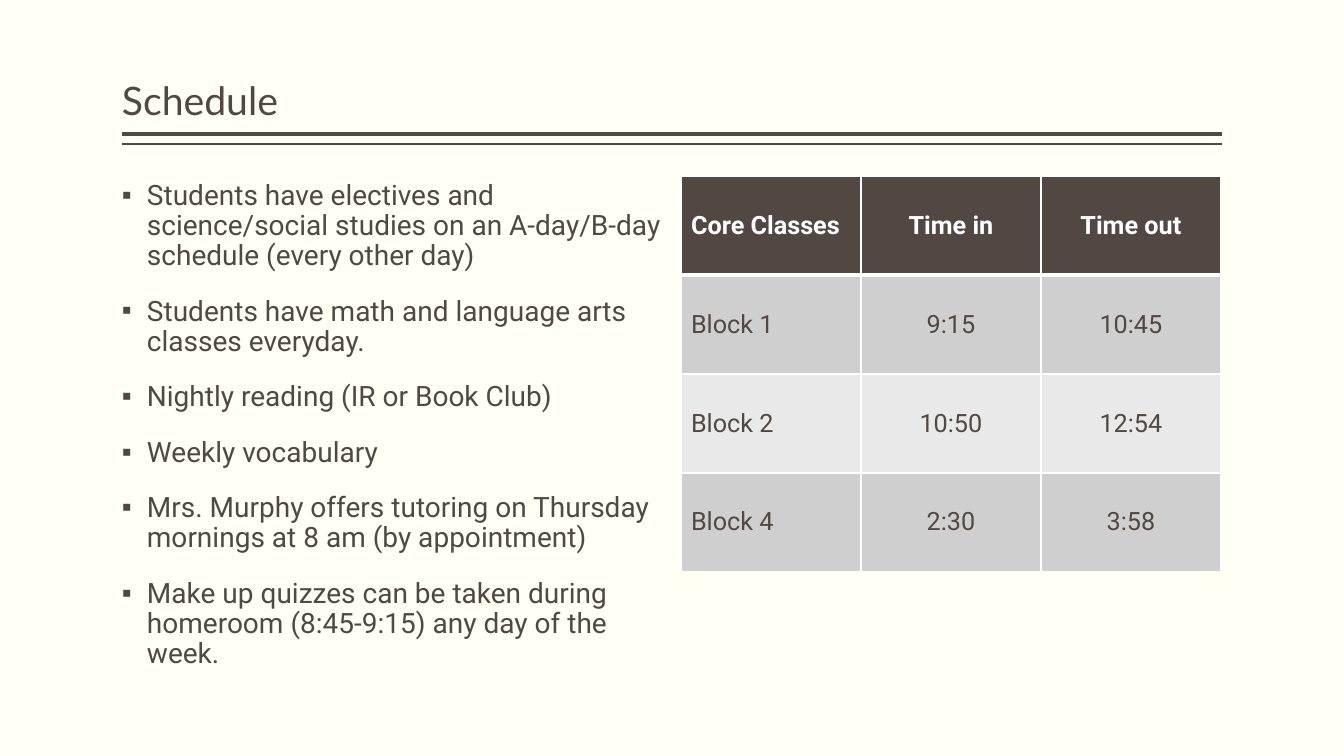
"""Build the class schedule slide with its notes list and timetable."""
from dataclasses import dataclass

from lxml import etree
from pptx import Presentation
from pptx import util as u
from pptx.dml.color import RGBColor
from pptx.enum import shapes, text
from pptx.oxml.ns import qn

EMU_PER_PX = 914400 / 100.8


def px(n):
    return u.Emu(round(n * EMU_PER_PX))


def rgb(value):
    return RGBColor.from_string(value)


@dataclass(frozen=True)
class Theme:
    paper: str = "FFFFF3"
    ink: str = "514843"
    white: str = "FFFFFF"
    bands: tuple = ("D0CFCF", "E9E9E9")
    head_font: str = "Lato"
    body_font: str = "Roboto"
    title_size: int = 28
    body_size: int = 20
    cell_size: int = 18


def write(p, words, size, font, color, bold=False, align=text.PP_ALIGN.LEFT,
          line=1.0, before=0, bullet=None, indent=0):
    p.alignment = align
    p.line_spacing = line
    p.space_before = u.Pt(before)
    r = p.add_run()
    r.text = words
    r.font.size = u.Pt(size)
    r.font.name = font
    r.font.bold = bold
    r.font.color.rgb = rgb(color)
    if bullet:
        pPr = p._p.get_or_add_pPr()
        pPr.set("marL", str(px(indent)))
        pPr.set("indent", str(-px(indent)))
        etree.SubElement(pPr, qn("a:buFont"), typeface="Arial")
        etree.SubElement(pPr, qn("a:buChar"), char=bullet)


class Deck:
    def __init__(self, theme):
        self.theme = theme
        self.prs = Presentation()
        self.prs.slide_width, self.prs.slide_height = px(1344), px(756)
        self.s = self.prs.slides.add_slide(self.prs.slide_layouts[5])
        fill = self.s.background.fill
        fill.solid()
        fill.fore_color.rgb = rgb(theme.paper)

    def frame(self, sp, anchor):
        tf = sp.text_frame
        tf.word_wrap = True
        tf.auto_size = text.MSO_AUTO_SIZE.NONE
        tf.vertical_anchor = anchor
        tf.margin_left = tf.margin_right = 0
        tf.margin_top = tf.margin_bottom = px(5)
        return tf

    def title(self, words, x, y, w, h):
        sp = self.s.shapes.title
        sp.left, sp.top, sp.width, sp.height = map(px, (x, y, w, h))
        tf = self.frame(sp, text.MSO_ANCHOR.BOTTOM)
        write(tf.paragraphs[0], words, self.theme.title_size,
              self.theme.head_font, self.theme.ink, line=0.9)

    def rule(self, x, y, w, weight):
        line = self.s.shapes.add_connector(
            shapes.MSO_CONNECTOR.STRAIGHT, px(x), px(y), px(x + w), px(y))
        line.line.color.rgb = rgb(self.theme.ink)
        line.line.width = u.Pt(weight)
        etree.SubElement(line._element.spPr, qn("a:effectLst"))

    def bullets(self, items, x, y, w, h):
        sp = self.s.shapes.add_textbox(*map(px, (x, y, w, h)))
        tf = self.frame(sp, text.MSO_ANCHOR.TOP)
        for i, item in enumerate(items):
            p = tf.add_paragraph() if i else tf.paragraphs[0]
            write(p, item, self.theme.body_size, self.theme.body_font,
                  self.theme.ink, line=0.9, before=18, bullet="▪", indent=25)

    def borders(self, cell, **weights):
        tcPr = cell._tc.get_or_add_tcPr()
        for side in "LRTB":
            ln = etree.SubElement(tcPr, qn(f"a:ln{side}"),
                                  w=str(u.Pt(weights.get(side, 1))))
            fill = etree.SubElement(ln, qn("a:solidFill"))
            etree.SubElement(fill, qn("a:srgbClr"), val=self.theme.white)

    def table(self, rows, x, y, col_w, row_h):
        t = self.theme
        n_rows, n_cols = len(rows), len(rows[0])
        table = self.s.shapes.add_table(
            n_rows, n_cols, px(x), px(y),
            px(col_w * n_cols), px(row_h * n_rows)).table
        for col in table.columns:
            col.width = px(col_w)
        for i, row in enumerate(rows):
            table.rows[i].height = px(row_h)
            head = i == 0
            for j, words in enumerate(row):
                cell = table.cell(i, j)
                self.borders(cell, T=3 if i == 1 else 1, B=3 if head else 1)
                cell.fill.solid()
                cell.fill.fore_color.rgb = rgb(
                    t.ink if head else t.bands[(i - 1) % 2])
                cell.vertical_anchor = text.MSO_ANCHOR.MIDDLE
                write(cell.text_frame.paragraphs[0], words, t.cell_size,
                      t.body_font, t.white if head else t.ink, bold=head,
                      align=text.PP_ALIGN.CENTER if j else text.PP_ALIGN.LEFT)


NOTES = [
    "Students have electives and science/social studies on an A-day/B-day "
    "schedule (every other day)",
    "Students have math and language arts classes everyday.",
    "Nightly reading (IR or Book Club)",
    "Weekly vocabulary",
    "Mrs. Murphy offers tutoring on Thursday mornings at 8 am "
    "(by appointment)",
    "Make up quizzes can be taken during homeroom (8:45-9:15) any day of "
    "the week.",
]
TIMETABLE = [
    ("Core Classes", "Time in", "Time out"),
    ("Block 1", "9:15", "10:45"),
    ("Block 2", "10:50", "12:54"),
    ("Block 4", "2:30", "3:58"),
]


def main():
    deck = Deck(Theme())
    deck.rule(122, 134, 1100, 3)
    deck.rule(122, 144, 1100, 1)
    deck.title("Schedule", 122, 8, 1100, 121)
    deck.bullets(NOTES, 122, 176, 542, 504)
    deck.table(TIMETABLE, 681, 176, 180, 99)
    deck.prs.save("out.pptx")


if __name__ == "__main__":
    main()
